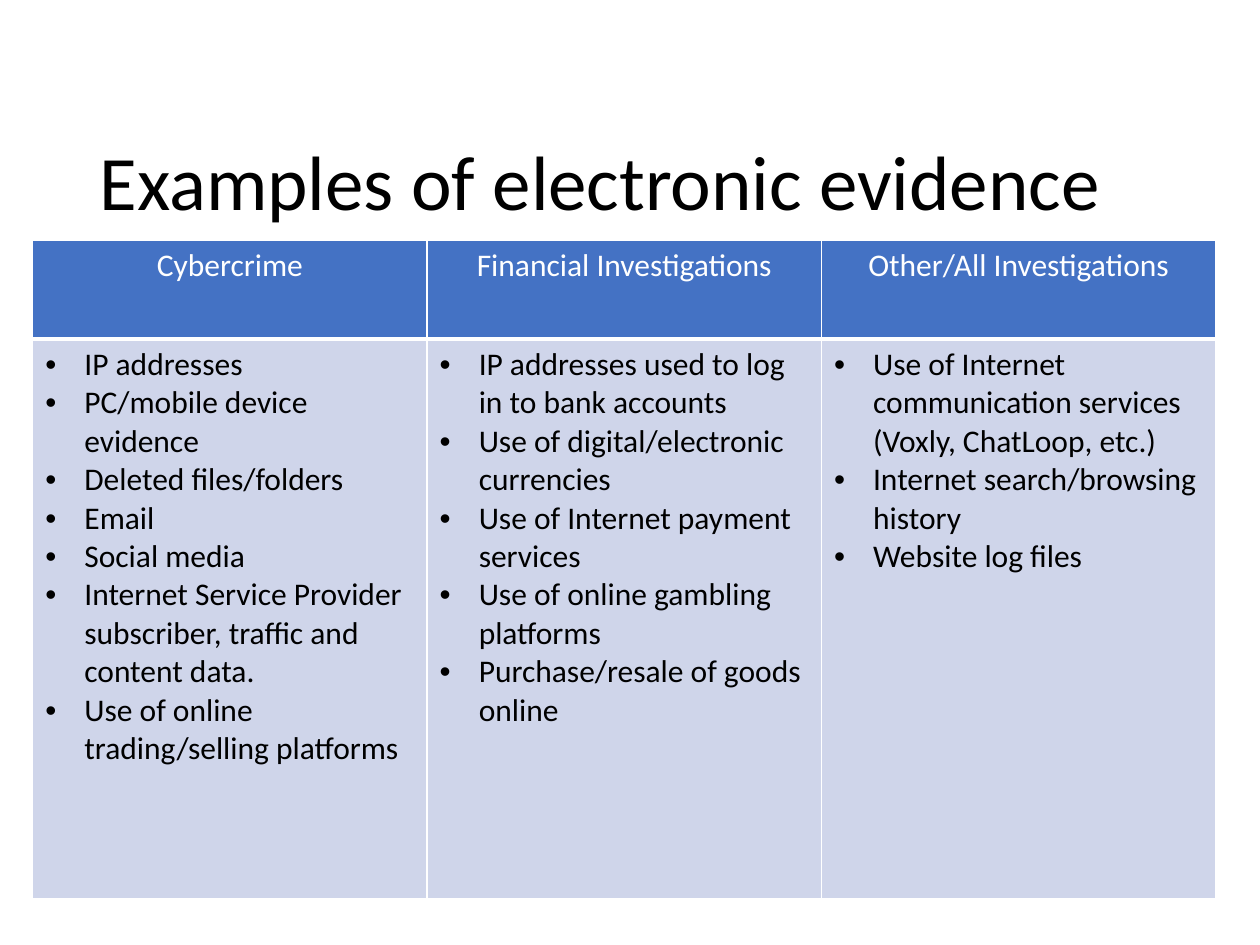
from lxml import etree
from pptx import Presentation
from pptx.dml.color import RGBColor
from pptx.enum.text import MSO_ANCHOR, PP_ALIGN
from pptx.oxml.ns import qn
from pptx.util import Inches, Pt

LEFT, CENTER = PP_ALIGN.LEFT, PP_ALIGN.CENTER
MIDDLE = MSO_ANCHOR.MIDDLE
TITLE_ONLY = 5
FONT = "Calibri"
COLORS = {"text": "000000", "white": "FFFFFF", "header": "4472C4", "body": "CFD5EA"}
INDENT = Inches(0.31)
COLUMN_WIDTH = 3.13
ROW_HEIGHTS = (0.78, 4.44)
EVIDENCE = {
    "Cybercrime": [
        "IP addresses",
        "PC/mobile device evidence",
        "Deleted files/folders",
        "Email",
        "Social media",
        "Internet Service Provider subscriber, traffic and content data.",
        "Use of online trading/selling platforms",
    ],
    "Financial Investigations": [
        "IP addresses used to log in to bank accounts",
        "Use of digital/electronic currencies",
        "Use of Internet payment services",
        "Use of online gambling platforms",
        "Purchase/resale of goods online",
    ],
    "Other/All Investigations": [
        "Use of Internet communication services (Voxly, ChatLoop, etc.)",
        "Internet search/browsing history",
        "Website log files",
    ],
}


def add_run(paragraph, text, size, color):
    """Add one formatted run to a paragraph."""
    run = paragraph.add_run()
    run.text = text
    run.font.name = FONT
    run.font.size = Pt(size)
    run.font.color.rgb = RGBColor.from_string(COLORS[color])


def add_bullet(paragraph):
    """Give a paragraph a hanging round bullet."""
    properties = paragraph._p.get_or_add_pPr()
    properties.set("marL", str(INDENT))
    properties.set("indent", str(-INDENT))
    etree.SubElement(properties, qn("a:buFont"), typeface="Arial")
    etree.SubElement(properties, qn("a:buChar"), char="•")


def style_cell(cell, fill, bottom_width=1):
    """Draw white borders around a cell and fill it."""
    properties = cell._tc.get_or_add_tcPr()
    widths = {"lnL": 1, "lnR": 1, "lnT": 1, "lnB": bottom_width}
    for side, width in widths.items():
        line = etree.SubElement(properties, qn(f"a:{side}"), w=str(Pt(width)))
        solid = etree.SubElement(line, qn("a:solidFill"))
        etree.SubElement(solid, qn("a:srgbClr"), val=COLORS["white"])
    cell.fill.solid()
    cell.fill.fore_color.rgb = RGBColor.from_string(COLORS[fill])


def fill_header(cell, heading):
    """Write a centred column heading."""
    style_cell(cell, "header", bottom_width=3)
    paragraph = cell.text_frame.paragraphs[0]
    paragraph.alignment = CENTER
    add_run(paragraph, heading, 18, "white")


def fill_list(cell, items):
    """Write a bulleted list into a cell."""
    style_cell(cell, "body")
    frame = cell.text_frame
    for index, item in enumerate(items):
        paragraph = frame.add_paragraph() if index else frame.paragraphs[0]
        add_bullet(paragraph)
        add_run(paragraph, item, 18, "text")


def add_title(slide, text):
    """Place and format the slide title."""
    title = slide.shapes.title
    title.left, title.top = Inches(0.69), Inches(0.75)
    title.width, title.height = Inches(8.62), Inches(1.45)
    title.text_frame.vertical_anchor = MIDDLE
    paragraph = title.text_frame.paragraphs[0]
    paragraph.alignment = LEFT
    paragraph.line_spacing = 0.9
    add_run(paragraph, text, 44, "text")


def add_evidence_table(slide):
    """Add the table with one column per investigation type."""
    count = len(EVIDENCE)
    table = slide.shapes.add_table(
        len(ROW_HEIGHTS), count, Inches(0.26), Inches(1.91),
        Inches(COLUMN_WIDTH * count), Inches(sum(ROW_HEIGHTS)),
    ).table
    for row, height in zip(table.rows, ROW_HEIGHTS):
        row.height = Inches(height)
    for index, (heading, items) in enumerate(EVIDENCE.items()):
        table.columns[index].width = Inches(COLUMN_WIDTH)
        fill_header(table.cell(0, index), heading)
        fill_list(table.cell(1, index), items)


def main():
    """Build and save the presentation."""
    presentation = Presentation()
    presentation.slide_width, presentation.slide_height = Inches(10), Inches(7.5)
    slide = presentation.slides.add_slide(presentation.slide_layouts[TITLE_ONLY])
    add_title(slide, "Examples of electronic evidence")
    add_evidence_table(slide)
    presentation.save("out.pptx")


if __name__ == "__main__":
    main()
